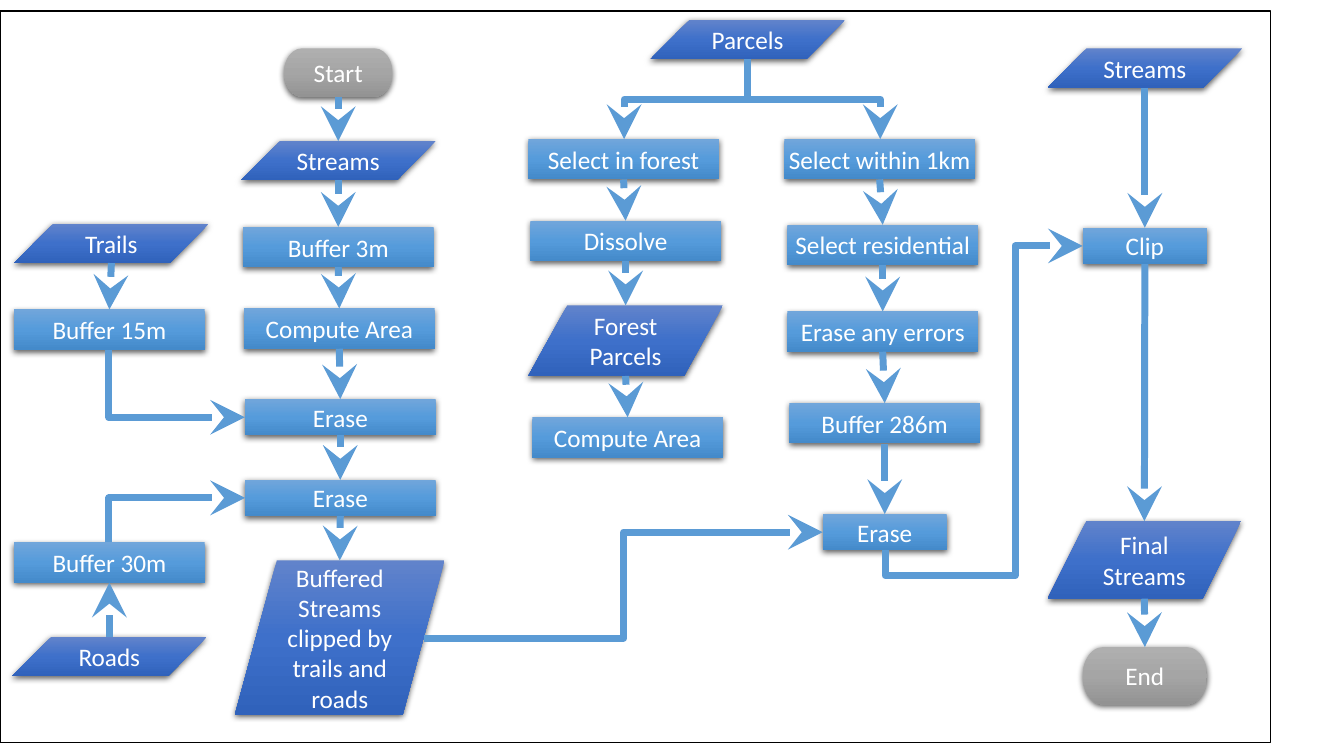
from lxml import etree
from pptx import Presentation
from pptx.dml.color import RGBColor
from pptx.enum.shapes import MSO_CONNECTOR, MSO_SHAPE
from pptx.enum.text import MSO_ANCHOR, PP_ALIGN
from pptx.oxml.ns import qn
from pptx.util import Inches, Pt

STRAIGHT, ELBOW = MSO_CONNECTOR.STRAIGHT, MSO_CONNECTOR.ELBOW
RECT = MSO_SHAPE.RECTANGLE
CENTER, MIDDLE = PP_ALIGN.CENTER, MSO_ANCHOR.MIDDLE
TOP, LEFT, BOTTOM = 0, 1, 2
# Sites of the slanted data shape
DATA_BOTTOM, DATA_RIGHT = 4, 5

COLORS = {"white": "FFFFFF", "black": "000000", "arrow": "5B9BD5"}
# Kind: preset, gradient, inset of the text
KINDS = {
    "end": (MSO_SHAPE.FLOWCHART_TERMINATOR, ("AFAFAF", "A5A5A5", "939393"), 0),
    "step": (MSO_SHAPE.FLOWCHART_PROCESS, ("71A6DB", "559BDB", "448ACA"), 0),
    "data": (MSO_SHAPE.FLOWCHART_DATA, ("6183CB", "3E70CA", "3062BB"), None),
}
STEP, DATA = (1.89, 0.4), (1.93, 0.39)
ERASE, SMALL = (1.89, 0.36), (1.23, 0.36)

# Name: kind, text, left, top, size
NODES = {
    "start": ("end", "Start", 2.82, 0.48, (1.07, 0.48)),
    "streams": ("data", "Streams", 2.39, 1.4, DATA),
    "buffer3": ("step", "Buffer 3m", 2.41, 2.25, STEP),
    "area": ("step", "Compute Area", 2.42, 3.06, STEP),
    "erase1": ("step", "Erase", 2.43, 3.96, ERASE),
    "erase2": ("step", "Erase", 2.43, 4.76, ERASE),
    "clipped": ("data", "Buffered Streams clipped by trails and roads",
                2.33, 5.56, (2.08, 1.53)),
    "trails": ("data", "Trails", 0.14, 2.22, DATA),
    "buffer15": ("step", "Buffer 15m", 0.14, 3.07, STEP),
    "buffer30": ("step", "Buffer 30m", 0.14, 5.38, STEP),
    "roads": ("data", "Roads", 0.12, 6.32, DATA),
    "parcels": ("data", "Parcels", 6.45, 0.2, DATA),
    "forest": ("step", "Select in forest", 5.24, 1.38, STEP),
    "dissolve": ("step", "Dissolve", 5.26, 2.19, STEP),
    "wooded": ("data", "Forest Parcels", 5.24, 3.03, (1.93, 0.7)),
    "area2": ("step", "Compute Area", 5.28, 4.14, STEP),
    "within": ("step", "Select within 1km", 7.78, 1.38, STEP),
    "homes": ("step", "Select residential", 7.81, 2.23, STEP),
    "errors": ("step", "Erase any errors", 7.81, 3.09, STEP),
    "buffer286": ("step", "Buffer 286m", 7.83, 4, STEP),
    "erase3": ("step", "Erase", 8.16, 5.1, SMALL),
    "streams2": ("data", "Streams", 10.39, 0.48, DATA),
    "clip": ("step", "Clip", 10.74, 2.26, SMALL),
    "final": ("data", "Final Streams", 10.39, 5.17, (1.92, 0.77)),
    "finish": ("end", "End", 10.74, 6.42, (1.23, 0.57)),
}
# Runs of nodes joined by straight arrows
CHAINS = [
    ("start", "streams", "buffer3", "area", "erase1", "erase2", "clipped"),
    ("trails", "buffer15"),
    ("roads", "buffer30"),
    ("forest", "dissolve", "wooded", "area2"),
    ("within", "homes", "errors", "buffer286", "erase3"),
    ("streams2", "clip", "final", "finish"),
]
# From, site, to, site, start, end, preset, adjustments
BENDS = [
    ("buffer15", BOTTOM, "erase1", LEFT, (1.08, 3.47), (2.43, 4.14), 2, ()),
    ("buffer30", TOP, "erase2", LEFT, (1.08, 5.38), (2.43, 4.94), 2, ()),
    ("parcels", DATA_BOTTOM, "forest", TOP, (7.41, 0.59), (6.19, 1.38), 3, (50000,)),
    ("parcels", DATA_BOTTOM, "within", TOP, (7.41, 0.59), (8.73, 1.38), 3, (50000,)),
    ("clipped", DATA_RIGHT, "erase3", LEFT, (4.21, 6.33), (8.16, 5.28), 3, (50000,)),
    ("erase3", BOTTOM, "clip", LEFT, (8.78, 5.46), (10.74, 2.44), 4, (-8300, 65700)),
]


def add(parent, tag, **attrs):
    """Append a drawing element with its attributes."""
    return etree.SubElement(parent, qn("a:" + tag), {k: str(v) for k, v in attrs.items()})


def color(name):
    return RGBColor.from_string(COLORS[name])


def frame(slide):
    box = slide.shapes.add_shape(RECT, 0, Inches(0.11), Inches(12.6), Inches(7.26))
    box.shadow.inherit = False
    box.fill.solid()
    box.fill.fore_color.rgb = color("white")
    box.line.color.rgb = color("black")
    box.line.width = Pt(1)


def shade(shape, stops):
    """Give a vertical gradient and a soft shadow."""
    shape.line.fill.background()
    props = shape._element.spPr
    grad = etree.Element(qn("a:gradFill"), rotWithShape="1")
    steps = add(grad, "gsLst")
    for pos, stop in zip((0, 50000, 100000), stops):
        add(add(steps, "gs", pos=pos), "srgbClr", val=stop)
    add(grad, "lin", ang=5400000, scaled=0)
    props.find(qn("a:prstGeom")).addnext(grad)
    shape.shadow.inherit = False
    cast = add(props.find(qn("a:effectLst")), "outerShdw", blurRad=Pt(4.5), dist=Pt(1.5),
               dir=5400000, algn="ctr", rotWithShape=0)
    add(add(cast, "srgbClr", val=COLORS["black"]), "alpha", val=63000)


def node(slide, kind, text, left, top, size):
    preset, stops, inset = KINDS[kind]
    shape = slide.shapes.add_shape(preset, *map(Inches, (left, top, *size)))
    shade(shape, stops)
    body = shape.text_frame
    body.word_wrap = True
    body.vertical_anchor = MIDDLE
    if inset is not None:
        body.margin_left = body.margin_right = Inches(inset)
        body.margin_top = body.margin_bottom = Inches(inset)
    body.text = text
    line = body.paragraphs[0]
    line.alignment = CENTER
    font = line.runs[0].font
    font.name, font.size, font.color.rgb = "Calibri", Pt(18), color("white")
    return shape


def style(wire):
    wire.line.color.rgb = color("arrow")
    wire.line.width = Pt(5)
    add(wire.line._get_or_add_ln(), "tailEnd", type="stealth", w="lg", len="lg")
    add(wire._element.spPr, "effectLst")


def link(slide, shapes, first, last):
    """Straight arrow between facing sides of two stacked nodes."""
    src, dst = shapes[first], shapes[last]
    down = src.top < dst.top
    y1 = src.top + src.height if down else src.top
    y2 = dst.top if down else dst.top + dst.height
    wire = slide.shapes.add_connector(STRAIGHT, src.left + src.width // 2, y1,
                                      dst.left + dst.width // 2, y2)
    if NODES[first][0] != "data":
        wire.begin_connect(src, BOTTOM if down else TOP)
    if NODES[last][0] != "data":
        wire.end_connect(dst, TOP if down else BOTTOM)
    style(wire)


def bend(slide, shapes, first, exit, last, entry, start, end, bends, adjust):
    """Elbow arrow; one that leaves vertically is a turned one."""
    (x1, y1), (x2, y2) = start, end
    turn = 0
    if exit != DATA_RIGHT:
        turn = 270 if x2 > x1 and y2 > y1 else 90
        sign = 1 if turn == 90 else -1
        mx, my = (x1 + x2) / 2, (y1 + y2) / 2
        x1, y1, x2, y2 = (mx + sign * (y1 - my), my - sign * (x1 - mx),
                          mx + sign * (y2 - my), my - sign * (x2 - mx))
    wire = slide.shapes.add_connector(ELBOW, *map(Inches, (x1, y1, x2, y2)))
    props = wire._element.spPr
    if turn:
        props.find(qn("a:xfrm")).set("rot", str(turn * 60000))
    shape = props.find(qn("a:prstGeom"))
    shape.set("prst", f"bentConnector{bends}")
    guides = shape.find(qn("a:avLst"))
    if guides is None:
        guides = add(shape, "avLst")
    for i, value in enumerate(adjust, 1):
        add(guides, "gd", name=f"adj{i}", fmla=f"val {value}")
    ends = wire._element.find(".//" + qn("p:cNvCxnSpPr"))
    add(ends, "stCxn", id=shapes[first].shape_id, idx=exit)
    add(ends, "endCxn", id=shapes[last].shape_id, idx=entry)
    style(wire)


def main():
    deck = Presentation()
    deck.slide_width, deck.slide_height = Inches(13.33), Inches(7.5)
    slide = deck.slides.add_slide(deck.slide_layouts[6])
    frame(slide)
    # Nodes
    shapes = {name: node(slide, *data) for name, data in NODES.items()}
    # Straight arrows
    for chain in CHAINS:
        for first, last in zip(chain, chain[1:]):
            link(slide, shapes, first, last)
    # Elbow arrows
    for data in BENDS:
        bend(slide, shapes, *data)
    deck.save("out.pptx")


if __name__ == "__main__":
    main()
